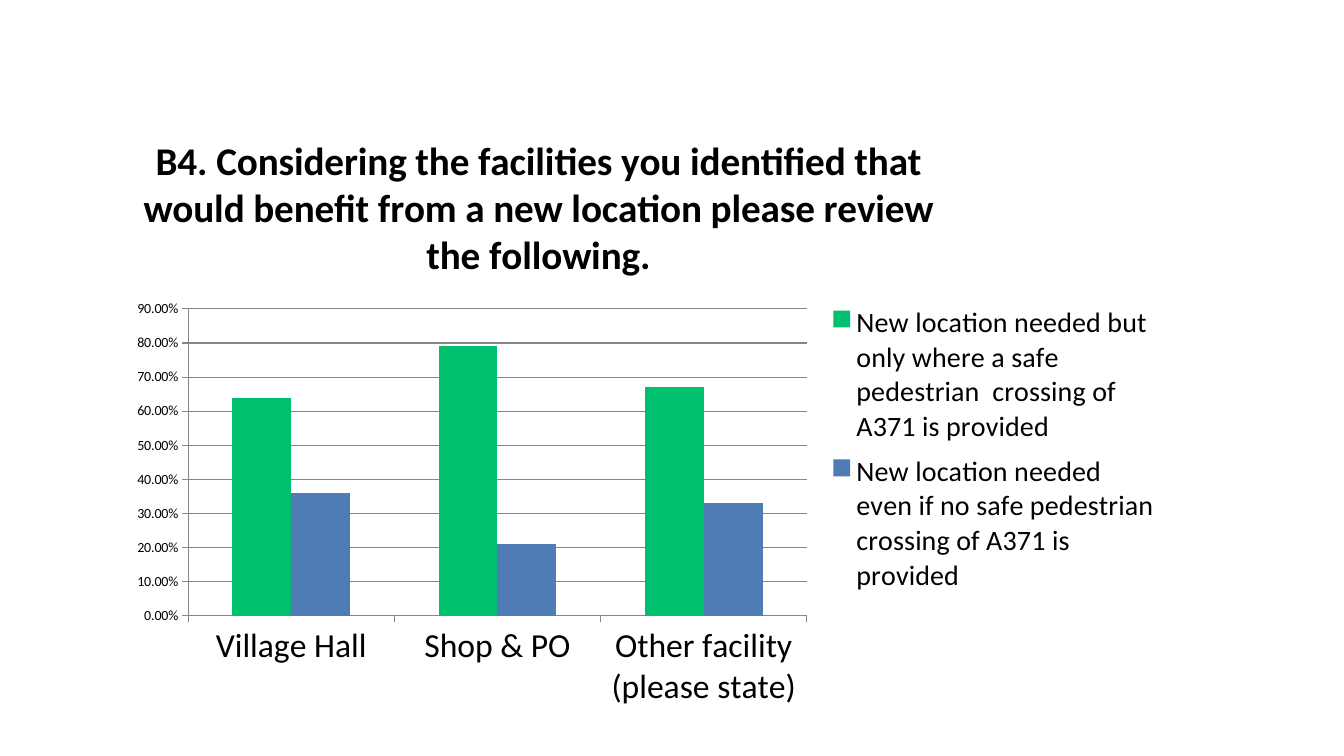
"""Build the survey slide on facilities that would benefit from a new location."""
from lxml import etree
from pptx import Presentation
from pptx.chart.data import CategoryChartData
from pptx.dml.color import RGBColor
from pptx.enum.chart import XL_CHART_TYPE, XL_LEGEND_POSITION, XL_TICK_MARK
from pptx.oxml.ns import qn
from pptx.util import Pt

COLUMNS = XL_CHART_TYPE.COLUMN_CLUSTERED
RIGHT = XL_LEGEND_POSITION.RIGHT
OUTSIDE = XL_TICK_MARK.OUTSIDE
NO_TICK = XL_TICK_MARK.NONE

COLORS = {"text": "000000", "line": "868686", "safe": "00BF6F", "any": "507CB6"}
TITLE = ("B4. Considering the facilities you identified that would benefit "
         "from a new location please review the following.")
FACILITIES = ["Village Hall", "Shop & PO", "Other facility (please state)"]
ANSWERS = [
    ("New location needed but only where a safe pedestrian  crossing of A371 is provided",
     [0.64, 0.79, 0.67], "safe"),
    ("New location needed even if no safe pedestrian crossing of A371 is provided",
     [0.36, 0.21, 0.33], "any"),
]


class SlideBuilder:
    def __init__(self, slide, font):
        self.s = slide
        self.font = font

    def color(self, name):
        return RGBColor.from_string(COLORS[name])

    def style(self, font, size, bold=False):
        font.name = self.font
        font.size = Pt(size)
        font.bold = bold
        font.color.rgb = self.color("text")

    def line(self, fmt):
        fmt.line.color.rgb = self.color("line")
        fmt.line.width = Pt(0.75)

    def place(self, parent, index, inner=False, **fractions):
        for old in parent.findall(qn("c:layout")):
            parent.remove(old)
        layout = etree.Element(qn("c:layout"))
        manual = etree.SubElement(layout, qn("c:manualLayout"))
        if inner:
            etree.SubElement(manual, qn("c:layoutTarget"), val="inner")
        for key in ("x", "y"):
            etree.SubElement(manual, qn(f"c:{key}Mode"), val="edge")
        for key, value in fractions.items():
            etree.SubElement(manual, qn(f"c:{key}"), val=f"{value:.4f}")
        parent.insert(index, layout)

    def column_chart(self, x, y, w, h, title, categories, answers):
        data = CategoryChartData(number_format="0.00%")
        data.categories = categories
        for name, values, _ in answers:
            data.add_series(name, values)
        chart = self.s.shapes.add_chart(COLUMNS, Pt(x), Pt(y), Pt(w), Pt(h), data).chart
        self.style(chart.font, 10)
        plot = chart.plots[0]
        plot.gap_width = 150
        plot.overlap = 0
        plot.vary_by_categories = False
        for series, (_, _, color) in zip(plot.series, answers):
            series.format.fill.solid()
            series.format.fill.fore_color.rgb = self.color(color)
            series.invert_if_negative = False

        for axis, size in ((chart.category_axis, 24), (chart.value_axis, 10)):
            self.style(axis.tick_labels.font, size)
            axis.major_tick_mark = OUTSIDE
            axis.minor_tick_mark = NO_TICK
            self.line(axis.format)
        axis = chart.value_axis
        axis.minimum_scale, axis.maximum_scale, axis.major_unit = 0, 0.9, 0.1
        axis.tick_labels.number_format = "0.00%"
        axis.tick_labels.number_format_is_linked = False
        axis.has_major_gridlines = True
        self.line(axis.major_gridlines.format)

        chart.has_title = True
        tf = chart.chart_title.text_frame
        tf.text = title
        self.style(tf.paragraphs[0].runs[0].font, 28, True)
        chart.chart_title.include_in_layout = False
        chart.has_legend = True
        chart.legend.position = RIGHT
        chart.legend.include_in_layout = False
        self.style(chart.legend.font, 20)
        return chart

    def arrange(self, chart, title, plot, legend):
        root = chart.element.find(qn("c:chart"))
        self.place(root.find(qn("c:title")), 1, **title)
        self.place(root.find(qn("c:plotArea")), 0, True, **plot)
        self.place(root.find(qn("c:legend")), 1, **legend)


def main():
    prs = Presentation()
    prs.slide_width, prs.slide_height = Pt(960), Pt(540)
    b = SlideBuilder(prs.slides.add_slide(prs.slide_layouts[6]), "Calibri")
    w, h = 751.7, 438.5
    chart = b.column_chart(83.5, 75.6, w, h, TITLE, FACILITIES, ANSWERS)
    b.arrange(
        chart,
        title={"x": 14 / w, "y": 15 / h},
        plot={"x": 50.8 / w, "y": 145.1 / h, "w": 442.1 / w, "h": 219.3 / h},
        legend={"x": 511 / w, "y": 135 / h, "w": 235 / w, "h": 220 / h},
    )
    prs.save("out.pptx")


if __name__ == "__main__":
    main()
